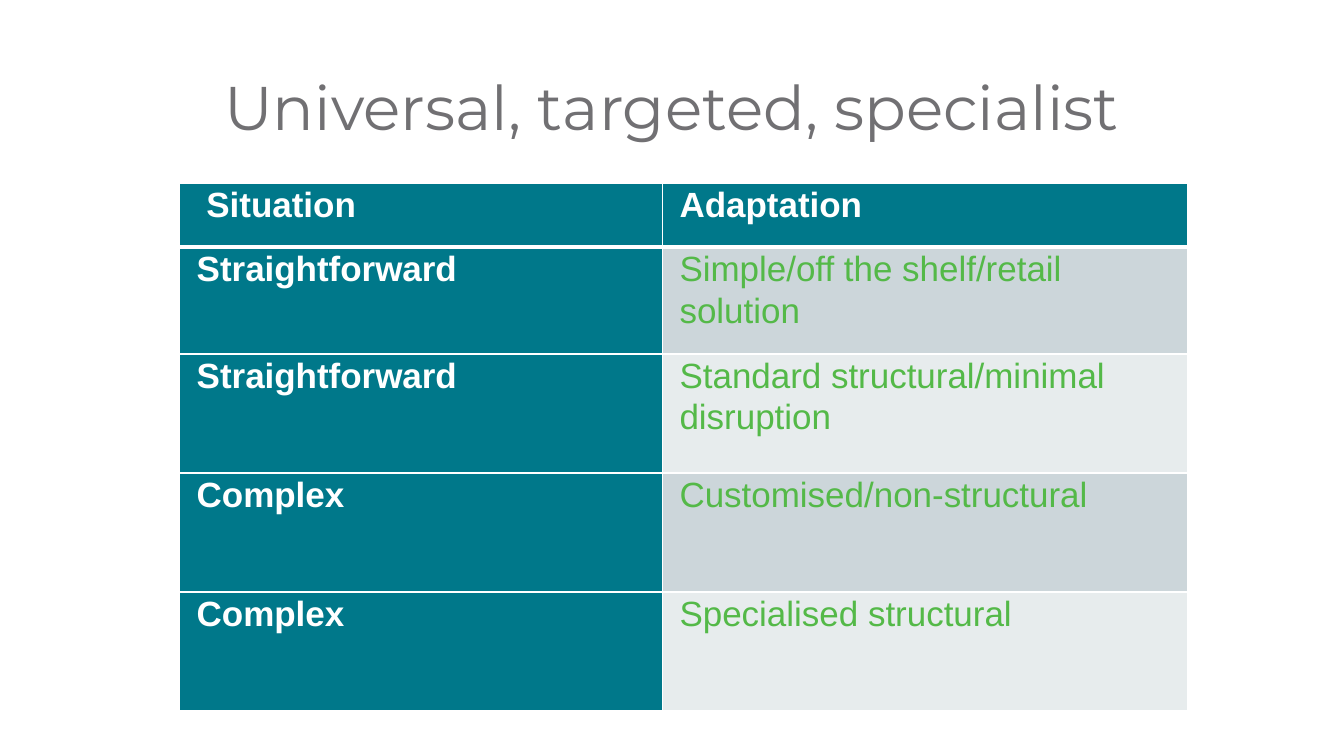
from pptx import Presentation
from pptx.dml.color import RGBColor
from pptx.enum.text import MSO_ANCHOR as Anchor, PP_ALIGN as Align
from pptx.oxml import parse_xml
from pptx.oxml.ns import nsdecls
from pptx.util import Pt

WHITE, GREY, TEAL, GREEN = "FFFFFF", "717073", "00788A", "54B948"
BANDS = ["CCD6DA", "E7ECED"]

HEADINGS = (" Situation", "Adaptation")
ADAPTATIONS = [
    ("Straightforward", "Simple/off the shelf/retail solution"),
    ("Straightforward", "Standard structural/minimal disruption"),
    ("Complex", "Customised/non-structural"),
    ("Complex", "Specialised structural"),
]
COLUMN_WIDTHS = [344.9, 375.1]
ROW_HEIGHTS = [45.4, 76.3, 85, 85, 85]


def color(value):
    return RGBColor.from_string(value)


class SlideBuilder:
    title_font = "Montserrat"
    table_font = "Arial"
    cell_margin = Pt(12.24)

    def __init__(self, slide):
        self.slide = slide

    def set_text(self, paragraph, text, name, size, ink, bold=False, spacing=1.0):
        paragraph.text = text
        paragraph.line_spacing = spacing
        font = paragraph.font
        font.name, font.size, font.bold = name, Pt(size), bold
        font.color.rgb = color(ink)

    def title(self, text, left, top, width, height):
        box = self.slide.shapes.add_textbox(Pt(left), Pt(top), Pt(width), Pt(height))
        frame = box.text_frame
        frame.word_wrap = True
        frame.vertical_anchor = Anchor.MIDDLE
        heading = frame.paragraphs[0]
        self.set_text(heading, text, self.title_font, 44, GREY, spacing=0.9)
        heading.alignment = Align.CENTER

    def borders(self, cell, top, bottom):
        """Draw white cell borders; top and bottom are widths in points."""
        properties = cell._tc.get_or_add_tcPr()
        for side, width in (("L", 1), ("R", 1), ("T", top), ("B", bottom)):
            properties.append(parse_xml(
                f'<a:ln{side} {nsdecls("a")} w="{Pt(width)}"><a:solidFill>'
                f'<a:srgbClr val="{WHITE}"/></a:solidFill></a:ln{side}>'))

    def cell(self, cell, text, fill, ink, bold, top, bottom):
        cell.margin_left = cell.margin_right = self.cell_margin
        cell.margin_top = cell.margin_bottom = 0
        self.borders(cell, top, bottom)
        cell.fill.solid()
        cell.fill.fore_color.rgb = color(fill)
        self.set_text(cell.text_frame.paragraphs[0], text, self.table_font, 25,
                      ink, bold, spacing=1.07)

    def table(self, rows, left, top, widths, heights):
        """Add a table whose first row and first column are headers."""
        table = self.slide.shapes.add_table(
            len(rows), len(widths), Pt(left), Pt(top),
            Pt(sum(widths)), Pt(sum(heights))).table
        table.horz_banding = False
        table.first_col = True
        for column, width in zip(table.columns, widths):
            column.width = Pt(width)
        for r, (texts, height) in enumerate(zip(rows, heights)):
            table.rows[r].height = Pt(height)
            for c, text in enumerate(texts):
                header = r == 0 or c == 0
                self.cell(
                    table.cell(r, c), text,
                    fill=TEAL if header else BANDS[(r - 1) % 2],
                    ink=WHITE if header else GREEN, bold=header,
                    top=3 if r == 1 else 1, bottom=3 if r == 0 else 1)


def main():
    deck = Presentation()
    deck.slide_width, deck.slide_height = Pt(960), Pt(540)
    builder = SlideBuilder(deck.slides.add_slide(deck.slide_layouts[6]))
    builder.title("Universal, targeted, specialist", 66, 26.6, 828, 104.4)
    builder.table([HEADINGS, *ADAPTATIONS], 128.3, 131.2, COLUMN_WIDTHS, ROW_HEIGHTS)
    deck.save("out.pptx")


if __name__ == "__main__":
    main()
